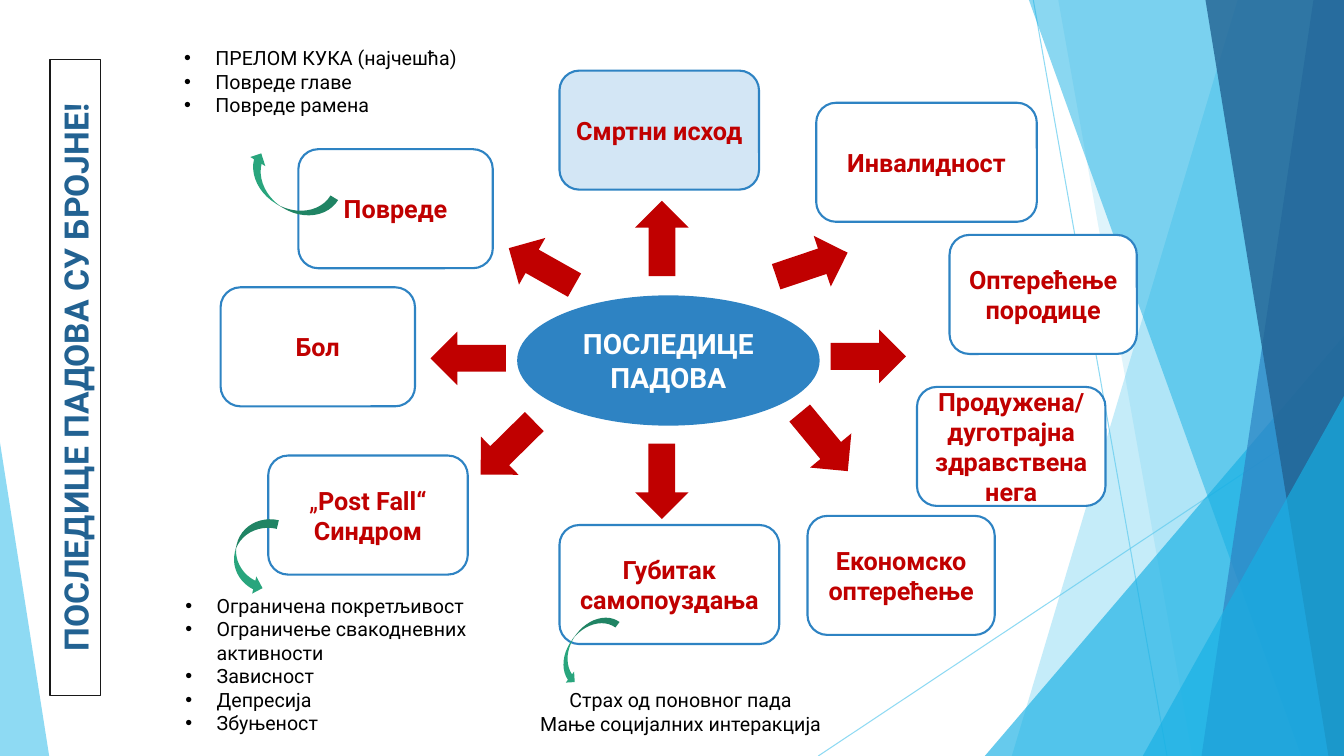
from dataclasses import dataclass

from lxml.etree import SubElement
from pptx import Presentation
from pptx.dml.color import RGBColor
from pptx.enum.shapes import MSO_CONNECTOR, MSO_SHAPE as Preset
from pptx.enum.text import MSO_ANCHOR as Anchor, MSO_AUTO_SIZE as AutoSize, PP_ALIGN as Align
from pptx.oxml.ns import qn
from pptx.util import Cm, Pt


@dataclass(frozen=True)
class Theme:
    """Colours, font and type sizes of the slide."""
    font: str = "Roboto"
    white: str = "FFFFFF"
    black: str = "000000"
    frame: str = "181818"
    sky: str = "5FCBEF"
    cyan: str = "17B0E4"
    blue: str = "2E83C3"
    navy: str = "226292"
    pale: str = "D3E6F5"
    red: str = "C00000"
    green: str = "29A57D"
    title_size: int = 24
    hub_size: int = 20
    node_size: int = 18
    note_size: int = 14


@dataclass(frozen=True)
class Box:
    """A rectangle measured in centimetres."""
    left: float
    top: float
    width: float
    height: float

    def inner(self, left, top, width, height):
        """Return a box placed relative to this one."""
        return Box(self.left + left, self.top + top, width, height)

    def lengths(self):
        """Return left, top, width and height as lengths."""
        return Cm(self.left), Cm(self.top), Cm(self.width), Cm(self.height)


THEME = Theme()
SLIDE = Box(0, 0, 33.87, 19.05)
DIAGRAM = Box(5.5, 1.5, 23.2, 15)
NODE_HEIGHT = 3
ARROW_WIDTH, ARROW_HEIGHT = 1.9, 1.35


def rgb(code):
    """Turn a hex code into a colour."""
    return RGBColor.from_string(code)


def paint(shape, fill, line=None, weight=1.5):
    """Give a shape a flat fill, an optional outline and no shadow."""
    shape.shadow.inherit = False
    shape.fill.solid()
    shape.fill.fore_color.rgb = rgb(fill)
    if line:
        shape.line.color.rgb = rgb(line)
        shape.line.width = Pt(weight)
    else:
        shape.line.fill.background()


def fade(shape, opacity):
    """Set the opacity in percent of every colour of a shape."""
    for colour in shape.element.spPr.iter(qn("a:srgbClr")):
        SubElement(colour, qn("a:alpha")).set("val", str(opacity * 1000))


def add_run(paragraph, text, size, colour, bold=False):
    """Append one formatted run to a paragraph."""
    run = paragraph.add_run()
    run.text = text
    run.font.name = THEME.font
    run.font.size = Pt(size)
    run.font.bold = bold
    run.font.color.rgb = rgb(colour)


def add_label(shape, runs, size, colour):
    """Write centred runs of (text, bold) in the middle of a shape."""
    frame = shape.text_frame
    frame.word_wrap = True
    frame.auto_size = AutoSize.NONE
    frame.vertical_anchor = Anchor.MIDDLE
    paragraph = frame.paragraphs[0]
    paragraph.alignment = Align.CENTER
    for text, bold in runs:
        add_run(paragraph, text, size, colour, bold)


def add_ray(slide, box, start, end):
    """Draw a thin translucent line between two points of a box."""
    ray = slide.shapes.add_connector(
        MSO_CONNECTOR.STRAIGHT,
        Cm(box.left + start[0]), Cm(box.top + start[1]),
        Cm(box.left + end[0]), Cm(box.top + end[1]))
    ray.line.color.rgb = rgb(THEME.sky)
    ray.line.width = Pt(0.75)
    fade(ray, 70)
    SubElement(ray.element.spPr, qn("a:effectLst"))


def add_shard(slide, box, top_x, bottom_x, colour, opacity):
    """Fill a box from a slanted left edge to its right side."""
    right, bottom = Cm(box.left + box.width), Cm(box.top + box.height)
    start = Cm(box.left + top_x), Cm(box.top)
    outline = slide.shapes.build_freeform(*start)
    outline.add_line_segments(
        [(right, start[1]), (right, bottom), (Cm(box.left + bottom_x), bottom)], close=True)
    shard = outline.convert_to_shape()
    paint(shard, colour)
    fade(shard, opacity)


def add_wedge(slide, box, apex, colour, opacity):
    """Draw a right-angled triangle with its apex at 0 (left) or 1 (right)."""
    wedge = slide.shapes.add_shape(Preset.ISOSCELES_TRIANGLE, *box.lengths())
    wedge.adjustments[0] = apex
    paint(wedge, colour)
    fade(wedge, opacity)


def draw_backdrop(slide, box):
    """Layer the translucent facets along the slide edges."""
    add_ray(slide, box, (26.04, 0), (29.41, box.height))
    add_ray(slide, box, (box.width, 10.24), (20.62, box.height))
    add_shard(slide, box, 31.19, 25.5, THEME.sky, 36)
    add_shard(slide, box, 26.67, 30.05, THEME.sky, 20)
    add_wedge(slide, box.inner(24.82, 8.46, 9.05, 10.59), 1, THEME.cyan, 66)
    add_shard(slide, box, 25.93, 32.79, THEME.cyan, 50)
    add_shard(slide, box, 33.1, 30.28, THEME.blue, 70)
    add_shard(slide, box, 30.38, 33.48, THEME.navy, 80)
    add_wedge(slide, box.inner(28.8, 9.98, 5.07, 9.07), 1, THEME.cyan, 66)
    add_wedge(slide, box.inner(0, 11.15, 1.24, 7.9), 0, THEME.sky, 70)


def draw_title(slide, box):
    """Turn the title upwards so that it fills an upright box."""
    title = slide.shapes.title
    shift = (box.height - box.width) / 2
    upright = box.inner(-shift, shift, box.height, box.width)
    title.left, title.top, title.width, title.height = upright.lengths()
    title.rotation = 270
    title.fill.solid()
    title.fill.fore_color.rgb = rgb(THEME.white)
    title.line.color.rgb = rgb(THEME.frame)
    title.line.width = Pt(0.75)
    add_label(title, [("ПОСЛЕДИЦЕ ПАДОВА СУ БРОЈНЕ!", True)], THEME.title_size, THEME.navy)


def draw_diagram(slide, box):
    """Draw the hub, its consequences and the arrows between them."""
    hub = slide.shapes.add_shape(Preset.OVAL, *box.inner(7.56, 5.97, 7.57, 3.23).lengths())
    paint(hub, THEME.blue, THEME.blue)
    add_label(hub, [("ПОСЛЕДИЦЕ ПАДОВА", True)], THEME.hub_size, THEME.white)

    consequences = [
        (8.6, 0.28, 5.03, THEME.pale, [("Смртни исход", True)]),
        (8.6, 11.73, 5.54, THEME.white, [("Губитак самопоуздања", True)]),
        (1.26, 9.98, 5.03, THEME.white, [("„", False), ("Post Fall“ Синдром", True)]),
        (0.06, 5.74, 4.9, THEME.white, [("Бол", True)]),
        (2.02, 2.26, 4.9, THEME.white, [("Повреде", True)]),
        (18.43, 4.42, 4.72, THEME.white, [("Оптерећење породице", True)]),
        (17.61, 8.25, 4.75, THEME.white, [("Продужена/ дуготрајна здравствена нега", True)]),
        (14.85, 11.5, 4.72, THEME.white, [("Економско оптерећење", True)]),
        (15.07, 1.09, 5.56, THEME.white, [("Инвалидност", True)]),
    ]
    for left, top, width, fill, runs in consequences:
        node = slide.shapes.add_shape(
            Preset.ROUNDED_RECTANGLE, *box.inner(left, top, width, NODE_HEIGHT).lengths())
        paint(node, fill, THEME.blue)
        add_label(node, runs, THEME.node_size, THEME.red)

    arrows = [(11.18, 10.63, 270), (7.29, 9.79, 315.4), (11.18, 4.51, 90), (15.26, 9.64, 230.4),
              (6.3, 7.53, 0), (16.38, 7.48, 180), (8.15, 5.22, 29.4), (14.96, 5.17, 161.4)]
    for x, y, angle in arrows:
        place = box.inner(x - ARROW_WIDTH / 2, y - ARROW_HEIGHT / 2, ARROW_WIDTH, ARROW_HEIGHT)
        arrow = slide.shapes.add_shape(Preset.LEFT_ARROW, *place.lengths())
        arrow.rotation = angle
        paint(arrow, THEME.red)

    curves = [(Preset.CURVED_UP_ARROW, (8.19, 14.45, 2.06, 0.69), 126.7, False),
              (Preset.CURVED_LEFT_ARROW, (0.42, 11.48, 0.89, 1.98), 13.5, True),
              (Preset.CURVED_LEFT_ARROW, (1.28, 2.03, 0.89, 2.49), 121.3, False)]
    for preset, place, angle, mirrored in curves:
        curve = slide.shapes.add_shape(preset, *box.inner(*place).lengths())
        curve.rotation = angle
        if mirrored:
            curve.element.spPr.xfrm.set("flipH", "1")
        paint(curve, THEME.green)


def draw_note(slide, box, lines, bulleted=True):
    """Write lines as a bulleted list or as centred text."""
    frame = slide.shapes.add_textbox(*box.lengths()).text_frame
    frame.word_wrap = True
    for index, line in enumerate(lines):
        paragraph = frame.add_paragraph() if index else frame.paragraphs[0]
        if bulleted:
            properties = paragraph._p.get_or_add_pPr()
            properties.set("marL", str(Cm(0.79)))
            properties.set("indent", str(-Cm(0.79)))
            SubElement(properties, qn("a:buFont")).set("typeface", "Arial")
            SubElement(properties, qn("a:buChar")).set("char", "•")
        else:
            paragraph.alignment = Align.CENTER
        add_run(paragraph, line, THEME.note_size, THEME.black)


def main():
    """Build the slide and save it."""
    deck = Presentation()
    deck.slide_width, deck.slide_height = Cm(SLIDE.width), Cm(SLIDE.height)
    slide = deck.slides.add_slide(deck.slide_layouts[5])
    draw_backdrop(slide, SLIDE)
    draw_title(slide, Box(1.26, 1.5, 1.27, 16.03))
    draw_diagram(slide, DIAGRAM)
    draw_note(slide, Box(4.39, 1.04, 8.66, 2.06),
              ["ПРЕЛОМ КУКА (најчешћа)", "Повреде главе", "Повреде рамена"])
    draw_note(slide, Box(4.42, 14.83, 10.06, 3.94),
              ["Ограничена покретљивост", "Ограничење свакодневних активности",
               "Зависност", "Депресија", "Збуњеност"])
    draw_note(slide, Box(11.68, 17.22, 10.95, 1.45),
              ["Страх од поновног пада", "Мање социјалних интеракција"], bulleted=False)
    deck.save("out.pptx")


if __name__ == "__main__":
    main()
